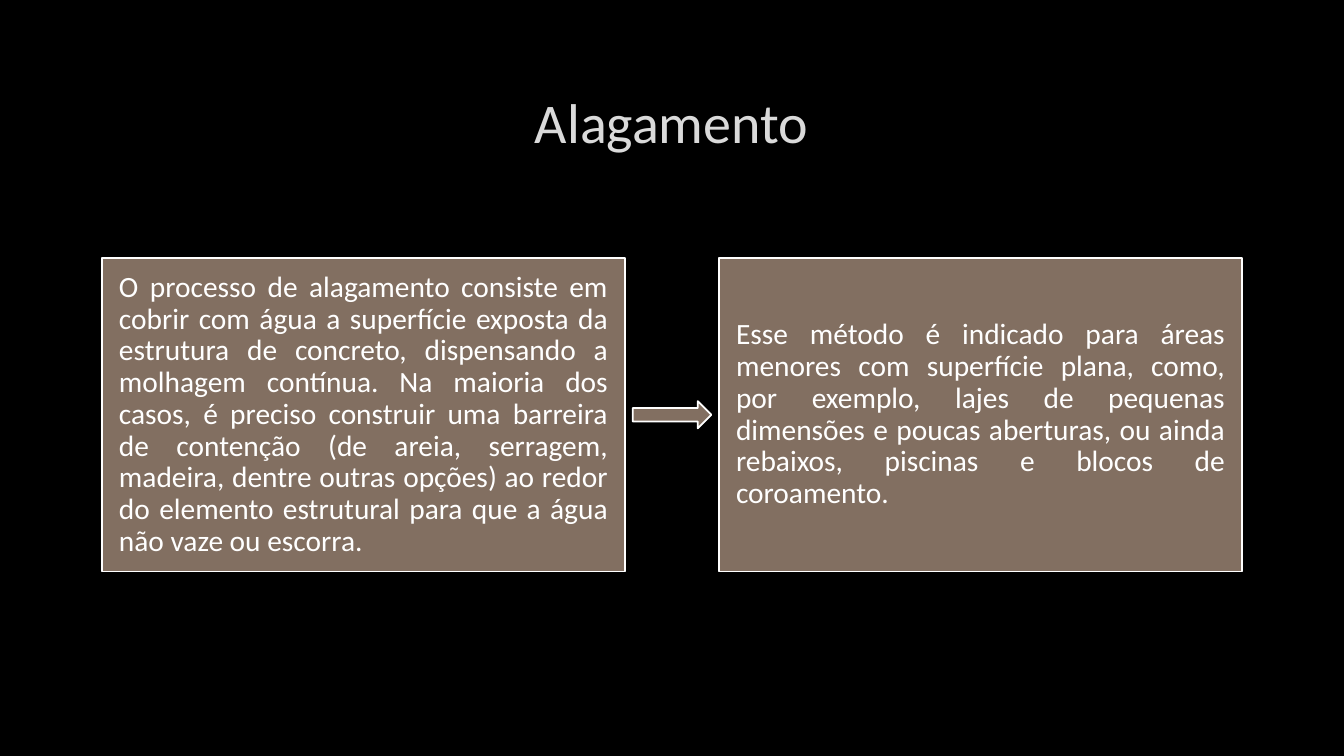
from pptx import Presentation
from pptx.dml.color import RGBColor
from pptx.enum.shapes import MSO_SHAPE
from pptx.enum.text import MSO_ANCHOR, PP_ALIGN
from pptx.util import Inches, Pt

BLACK = RGBColor(0x00, 0x00, 0x00)
WHITE = RGBColor(0xFF, 0xFF, 0xFF)
LIGHT_GRAY = RGBColor(0xDA, 0xDA, 0xDA)
BROWN = RGBColor(0x82, 0x6F, 0x61)

FONT = "Calibri"
STEPS = [
    "O processo de alagamento consiste em cobrir com água a superfície exposta da "
    "estrutura de concreto, dispensando a molhagem contínua. Na maioria dos casos, é "
    "preciso construir uma barreira de contenção (de areia, serragem, madeira, dentre "
    "outras opções) ao redor do elemento estrutural para que a água não vaze ou escorra.",
    "Esse método é indicado para áreas menores com superfície plana, como, por exemplo, "
    "lajes de pequenas dimensões e poucas aberturas, ou ainda rebaixos, piscinas e blocos "
    "de coroamento.",
]


def write_text(shape, text, size, color, alignment):
    frame = shape.text_frame
    frame.word_wrap = True
    frame.vertical_anchor = MSO_ANCHOR.MIDDLE
    paragraph = frame.paragraphs[0]
    paragraph.text = text
    paragraph.alignment = alignment
    paragraph.font.name = FONT
    paragraph.font.size = Pt(size)
    paragraph.font.color.rgb = color
    return frame


def add_title(slide, text, left, top, width, height):
    box = slide.shapes.add_textbox(
        Inches(left), Inches(top), Inches(width), Inches(height))
    write_text(box, text, 40, LIGHT_GRAY, PP_ALIGN.CENTER)


def add_brown_shape(slide, kind, left, top, width, height):
    shape = slide.shapes.add_shape(
        kind, Inches(left), Inches(top), Inches(width), Inches(height))
    shape.shadow.inherit = False
    shape.fill.solid()
    shape.fill.fore_color.rgb = BROWN
    shape.line.color.rgb = WHITE
    shape.line.width = Pt(1.25)
    return shape


def add_step(slide, text, left, top, width, height):
    card = add_brown_shape(slide, MSO_SHAPE.RECTANGLE, left, top, width, height)
    frame = write_text(card, text, 21, WHITE, PP_ALIGN.JUSTIFY)
    frame.margin_left = frame.margin_right = Inches(0.17)
    frame.margin_top = frame.margin_bottom = Inches(0.17)
    frame.paragraphs[0].line_spacing = 0.9


def add_process(slide, steps, left, top, width, height):
    """Spread equal cards over the box, with an arrow centred in each gap."""
    gap, arrow_width, arrow_height = 0.93, 0.78, 0.27
    card_width = (width - gap * (len(steps) - 1)) / len(steps)
    for index, text in enumerate(steps):
        card_left = left + index * (card_width + gap)
        add_step(slide, text, card_left, top, card_width, height)
        if index:
            add_brown_shape(
                slide, MSO_SHAPE.RIGHT_ARROW,
                card_left - (gap + arrow_width) / 2,
                top + (height - arrow_height) / 2,
                arrow_width, arrow_height)


def main():
    presentation = Presentation()
    presentation.slide_width = Inches(13.33)
    presentation.slide_height = Inches(7.5)
    slide = presentation.slides.add_slide(presentation.slide_layouts[6])
    slide.background.fill.solid()
    slide.background.fill.fore_color.rgb = BLACK
    add_title(slide, "Alagamento", 1, 0.67, 11.32, 1.06)
    add_process(slide, STEPS, 1.01, 2.56, 11.31, 3.11)
    presentation.save("out.pptx")


if __name__ == "__main__":
    main()
